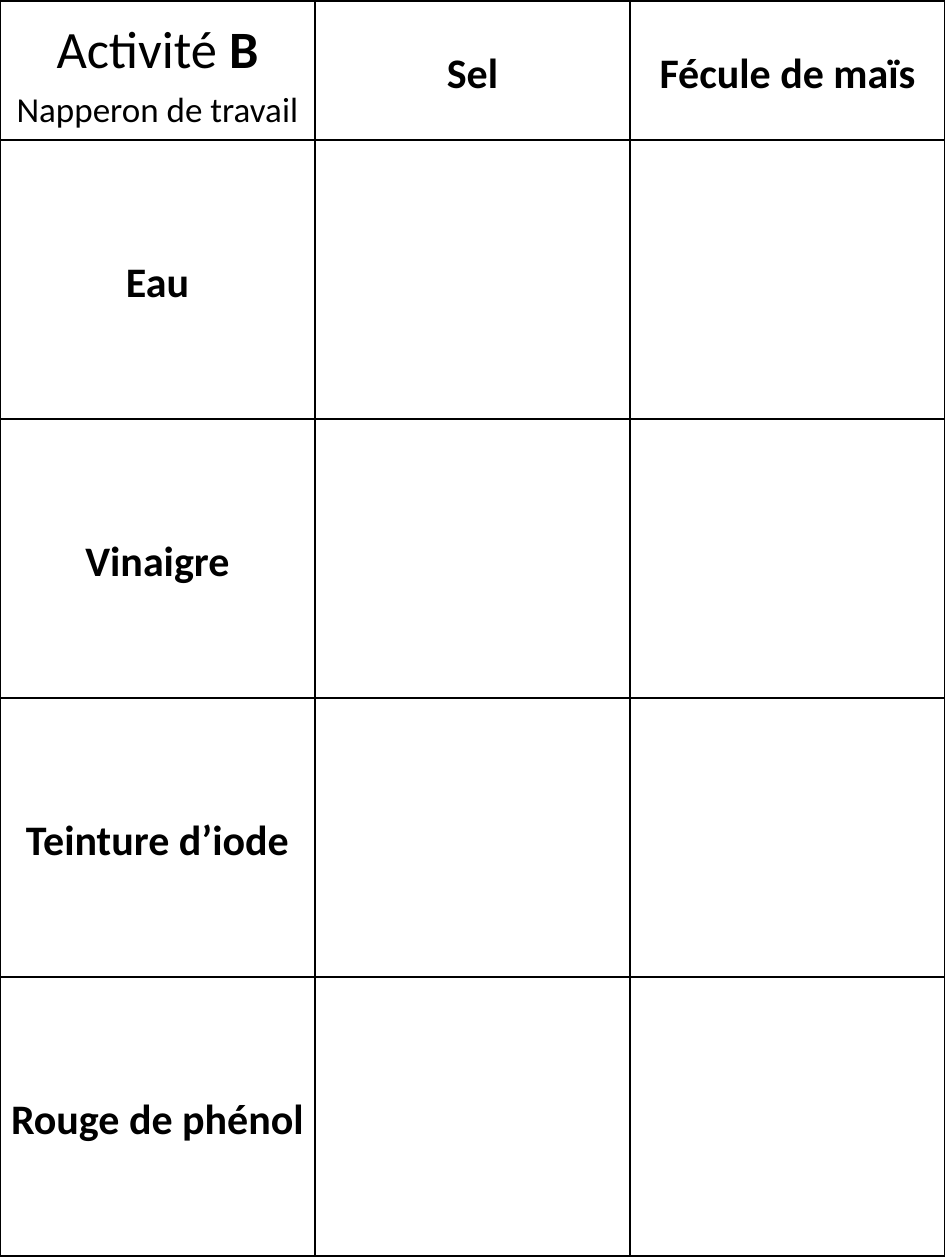
"""Build a work mat crossing two powders with four test liquids."""
import pptx
import pptx.dml.color
import pptx.enum.text
import pptx.oxml
import pptx.oxml.ns
import pptx.util
from pptx.util import Inches

COLOURS = {"ink": "000000"}
FONT = "Calibri"
POWDERS = ["Sel", "Fécule de maïs"]
LIQUIDS = ["Eau", "Vinaigre", "Teinture d’iode", "Rouge de phénol"]
COLUMN_WIDTH = 2.5
HEADER_HEIGHT = 1.1
ROW_HEIGHT = 2.215


def add_borders(cell):
    """Draw a one-point line on each side of a cell."""
    properties = cell._tc.get_or_add_tcPr()
    for position, side in enumerate(("lnL", "lnR", "lnT", "lnB")):
        line = pptx.oxml.parse_xml(
            f'<a:{side} {pptx.oxml.ns.nsdecls("a")} w="12700"><a:solidFill>'
            f'<a:srgbClr val="{COLOURS["ink"]}"/></a:solidFill></a:{side}>'
        )
        properties.insert(position, line)


def format_cell(cell):
    """Clear the fill of a cell, centre it and set its margins and borders."""
    cell.fill.background()
    cell.vertical_anchor = pptx.enum.text.MSO_ANCHOR.MIDDLE
    cell.margin_left = cell.margin_right = Inches(0.01)
    cell.margin_top = cell.margin_bottom = 0
    add_borders(cell)


def format_paragraph(paragraph, size, bold):
    """Centre a paragraph and set its spacing and font."""
    paragraph.alignment = pptx.enum.text.PP_ALIGN.CENTER
    paragraph.line_spacing = 1.15
    font = paragraph.font
    font.name = FONT
    font.size = pptx.util.Pt(size)
    font.bold = bold
    font.color.rgb = pptx.dml.color.RGBColor.from_string(COLOURS["ink"])


def write_label(cell, text):
    """Write a bold row or column heading."""
    paragraph = cell.text_frame.paragraphs[0]
    paragraph.text = text
    format_paragraph(paragraph, 24, True)


def write_title(cell):
    """Write the activity name and its subtitle."""
    title = cell.text_frame.paragraphs[0]
    title.add_run().text = "Activité "
    letter = title.add_run()
    letter.text = "B"
    letter.font.bold = True
    format_paragraph(title, 30, False)
    subtitle = cell.text_frame.add_paragraph()
    subtitle.text = "Napperon de travail"
    format_paragraph(subtitle, 20, False)


def add_work_mat(slide):
    """Add the table of powders and liquids."""
    rows, columns = len(LIQUIDS) + 1, len(POWDERS) + 1
    height = HEADER_HEIGHT + ROW_HEIGHT * len(LIQUIDS)
    table = slide.shapes.add_table(
        rows, columns, 0, Inches(0.01), Inches(COLUMN_WIDTH * columns), Inches(height)
    ).table
    table.first_row = table.horz_banding = False
    for column in table.columns:
        column.width = Inches(COLUMN_WIDTH)
    for index, row in enumerate(table.rows):
        row.height = Inches(ROW_HEIGHT if index else HEADER_HEIGHT)
    for cell in table.iter_cells():
        format_cell(cell)
    write_title(table.cell(0, 0))
    for index, powder in enumerate(POWDERS, 1):
        write_label(table.cell(0, index), powder)
    for index, liquid in enumerate(LIQUIDS, 1):
        write_label(table.cell(index, 0), liquid)


def main():
    """Create and save the presentation."""
    presentation = pptx.Presentation()
    presentation.slide_width = Inches(7.5)
    presentation.slide_height = Inches(10)
    slide = presentation.slides.add_slide(presentation.slide_layouts[6])
    add_work_mat(slide)
    presentation.save("out.pptx")


if __name__ == "__main__":
    main()
